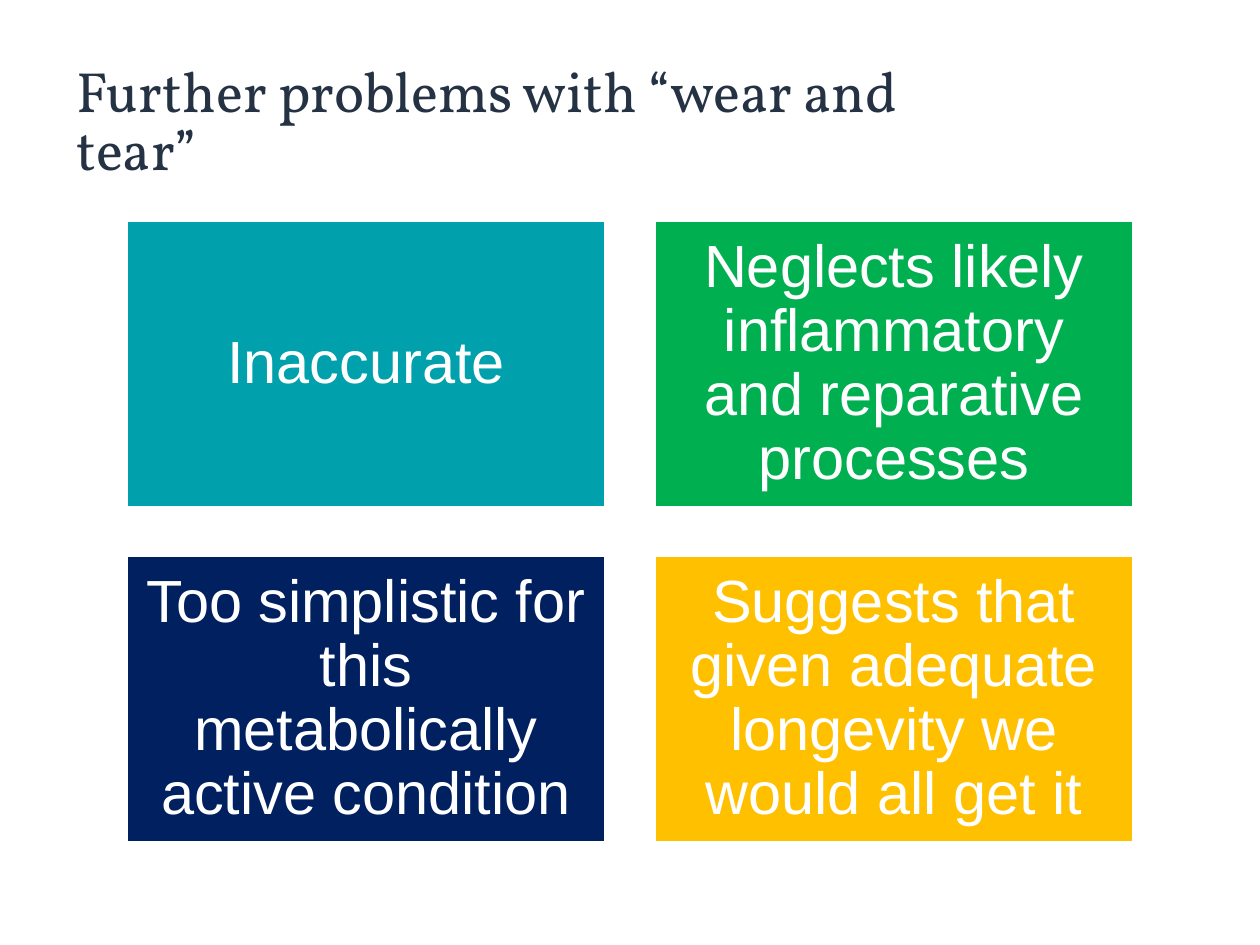
import pptx
import pptx.util
import pptx.dml.color
import pptx.enum.shapes
import pptx.enum.text

Inches, Pt = pptx.util.Inches, pptx.util.Pt
Align = pptx.enum.text.PP_ALIGN
Middle = pptx.enum.text.MSO_ANCHOR.MIDDLE


def color(code):
    return pptx.dml.color.RGBColor.from_string(code)


def style(frame, face, size, code, align, pitch):
    """Format the only paragraph of a frame and centre it vertically."""
    frame.word_wrap = True
    frame.auto_size = pptx.enum.text.MSO_AUTO_SIZE.NONE
    frame.vertical_anchor = Middle
    para = frame.paragraphs[0]
    para.alignment = align
    para.line_spacing = pitch
    font = para.runs[0].font
    font.name, font.size = face, Pt(size)
    font.color.rgb = color(code)


deck = pptx.Presentation()
deck.slide_width, deck.slide_height = Inches(10), Inches(7.5)
slide = deck.slides.add_slide(deck.slide_layouts[5])

title = slide.shapes.title
title.left, title.top = Inches(0.51), Inches(0.36)
title.width, title.height = Inches(7.56), Inches(1.25)
title.text_frame.text = "Further problems with “wear and tear”"
style(title.text_frame, "Vollkorn", 32.4, "253244", Align.LEFT, 0.86)

cards = [
    ("Inaccurate", "00A1AC"),
    ("Neglects likely inflammatory and reparative processes", "00B050"),
    ("Too simplistic for this metabolically active condition", "002060"),
    ("Suggests that given adequate longevity we would all get it", "FFC000"),
]
left, top, wide, high, gap = 1, 1.75, 3.81, 2.28, 0.38

for i, (text, fill) in enumerate(cards):
    row, col = divmod(i, 2)
    card = slide.shapes.add_shape(
        pptx.enum.shapes.MSO_SHAPE.RECTANGLE,
        Inches(left + col * (wide + gap)), Inches(top + row * (high + gap)),
        Inches(wide), Inches(high))
    card.shadow.inherit = False
    card.fill.solid()
    card.fill.fore_color.rgb = color(fill)
    card.line.color.rgb = color("FFFFFF")
    card.line.width = Pt(2)
    frame = card.text_frame
    frame.margin_left = frame.margin_right = Inches(0.14)
    frame.margin_top = frame.margin_bottom = Inches(0.14)
    frame.text = text
    style(frame, "Arial", 34, "FFFFFF", Align.CENTER, 0.9)

deck.save("out.pptx")
